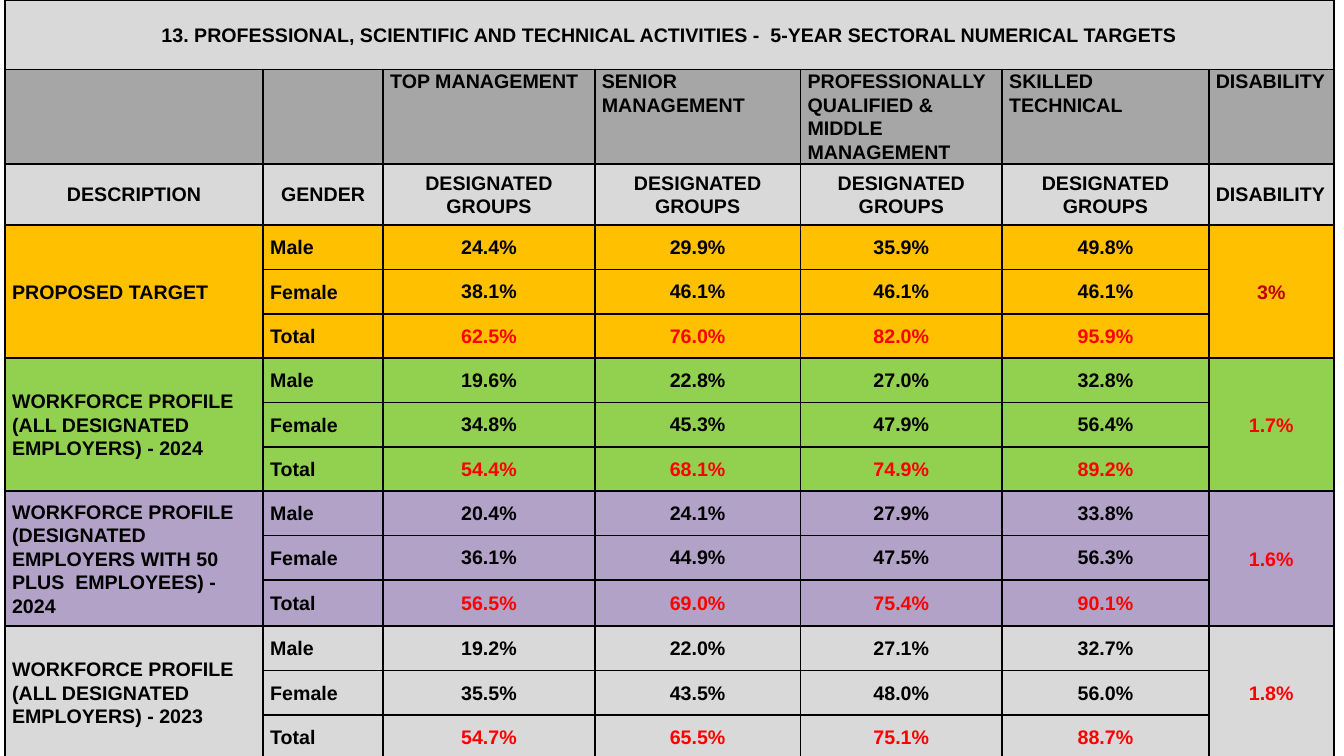
from lxml import etree
from pptx import Presentation
from pptx.dml.color import RGBColor
from pptx.enum.text import MSO_ANCHOR, PP_ALIGN
from pptx.oxml.ns import qn
from pptx.util import Inches, Pt

BLACK, RED, DARK_RED = "000000", "FF0000", "C00000"
LIGHT_GREY, DARK_GREY = "D9D9D9", "A6A6A6"

TITLE = ("13. PROFESSIONAL, SCIENTIFIC AND TECHNICAL ACTIVITIES -  "
         "5-YEAR SECTORAL NUMERICAL TARGETS")
LEVELS = ["", "", "TOP MANAGEMENT", "SENIOR MANAGEMENT",
          "PROFESSIONALLY QUALIFIED & MIDDLE MANAGEMENT",
          "SKILLED TECHNICAL", "DISABILITY"]
HEADINGS = ["DESCRIPTION", "GENDER"] + ["DESIGNATED GROUPS"] * 4 + ["DISABILITY"]
GENDERS = ["Male", "Female", "Total"]

# description, fill, disability, disability colour, one row of shares per gender
GROUPS = [
    ("PROPOSED TARGET", "FFC000", "3%", DARK_RED,
     [("24.4%", "29.9%", "35.9%", "49.8%"),
      ("38.1%", "46.1%", "46.1%", "46.1%"),
      ("62.5%", "76.0%", "82.0%", "95.9%")]),
    ("WORKFORCE PROFILE (ALL DESIGNATED EMPLOYERS) - 2024", "92D050", "1.7%", RED,
     [("19.6%", "22.8%", "27.0%", "32.8%"),
      ("34.8%", "45.3%", "47.9%", "56.4%"),
      ("54.4%", "68.1%", "74.9%", "89.2%")]),
    ("WORKFORCE PROFILE (DESIGNATED EMPLOYERS WITH 50 PLUS  EMPLOYEES) - 2024",
     "B3A2C7", "1.6%", RED,
     [("20.4%", "24.1%", "27.9%", "33.8%"),
      ("36.1%", "44.9%", "47.5%", "56.3%"),
      ("56.5%", "69.0%", "75.4%", "90.1%")]),
    ("WORKFORCE PROFILE (ALL DESIGNATED EMPLOYERS) - 2023", LIGHT_GREY, "1.8%", RED,
     [("19.2%", "22.0%", "27.1%", "32.7%"),
      ("35.5%", "43.5%", "48.0%", "56.0%"),
      ("54.7%", "65.5%", "75.1%", "88.7%")]),
]

COLUMN_WIDTHS = [2.56, 1.19, 2.1, 2.04, 2, 2.05, 1.24]
ROW_HEIGHTS = [0.69, 0.9, 0.61] + [0.44] * 8 + [0.46] + [0.44] * 3
HEADER_ROWS = 3
LAST = len(COLUMN_WIDTHS) - 1


def rgb(colour):
    return RGBColor.from_string(colour)


def add_borders(cell):
    properties = cell._tc.get_or_add_tcPr()
    for position, side in enumerate(("a:lnL", "a:lnR", "a:lnT", "a:lnB")):
        line = etree.Element(qn(side), w=str(Pt(1.5)))
        solid = etree.SubElement(line, qn("a:solidFill"))
        etree.SubElement(solid, qn("a:srgbClr"), val=BLACK)
        properties.insert(position, line)


def write(cell, text, colour=BLACK, align=PP_ALIGN.CENTER, anchor=MSO_ANCHOR.MIDDLE,
          inset=0.07, top=0, spacing=1.07):
    cell.margin_left = cell.margin_right = Inches(inset)
    cell.margin_top, cell.margin_bottom = Inches(top), 0
    cell.vertical_anchor = anchor
    cell.text = text
    paragraph = cell.text_frame.paragraphs[0]
    paragraph.alignment = align
    paragraph.line_spacing = spacing
    font = paragraph.font
    font.name, font.size, font.bold = "Arial", Pt(14), True
    font.color.rgb = rgb(colour)


def write_headers(table):
    table.cell(0, 0).merge(table.cell(0, LAST))
    write(table.cell(0, 0), TITLE)
    for column, (level, heading) in enumerate(zip(LEVELS, HEADINGS)):
        write(table.cell(1, column), level, align=PP_ALIGN.LEFT, anchor=MSO_ANCHOR.TOP)
        write(table.cell(2, column), heading,
              align=PP_ALIGN.LEFT if column == LAST else PP_ALIGN.CENTER)


def write_group(table, first_row, group):
    description, fill, disability, disability_colour, shares = group
    for column in (0, LAST):
        table.cell(first_row, column).merge(
            table.cell(first_row + len(GENDERS) - 1, column))
    write(table.cell(first_row, 0), description, align=PP_ALIGN.LEFT)
    write(table.cell(first_row, LAST), disability, disability_colour)
    tight = {} if fill == LIGHT_GREY else {"inset": 0.01, "top": 0.01, "spacing": 1.0}
    for row, (gender, values) in enumerate(zip(GENDERS, shares), first_row):
        write(table.cell(row, 1), gender, align=PP_ALIGN.LEFT)
        for column, value in enumerate(values, 2):
            write(table.cell(row, column), value,
                  RED if gender == "Total" else BLACK, **tight)


def main():
    deck = Presentation()
    deck.slide_width, deck.slide_height = Inches(13.33), Inches(7.5)
    slide = deck.slides.add_slide(deck.slide_layouts[6])
    table = slide.shapes.add_table(
        len(ROW_HEIGHTS), len(COLUMN_WIDTHS), Inches(0.05), 0,
        Inches(sum(COLUMN_WIDTHS)), Inches(sum(ROW_HEIGHTS))).table
    for column, width in zip(table.columns, COLUMN_WIDTHS):
        column.width = Inches(width)
    for row, height in zip(table.rows, ROW_HEIGHTS):
        row.height = Inches(height)

    write_headers(table)
    for index, group in enumerate(GROUPS):
        write_group(table, HEADER_ROWS + index * len(GENDERS), group)

    fills = [LIGHT_GREY, DARK_GREY, LIGHT_GREY]
    fills += [group[1] for group in GROUPS for _ in GENDERS]
    for row, fill in zip(table.rows, fills):
        for cell in row.cells:
            cell.fill.solid()
            cell.fill.fore_color.rgb = rgb(fill)
            add_borders(cell)
    deck.save("out.pptx")


if __name__ == "__main__":
    main()
